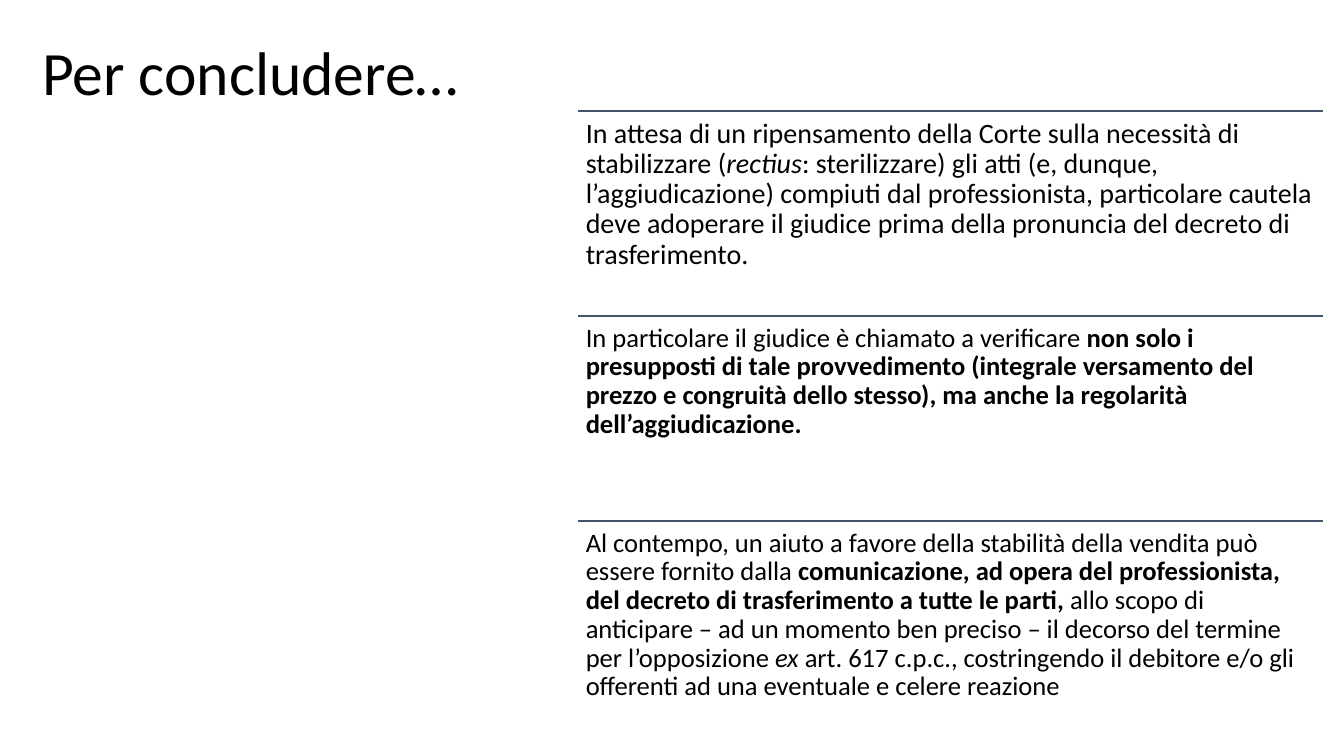
"""Builds the closing slide: a title and three ruled conclusions."""
from dataclasses import dataclass

from lxml.etree import SubElement
from pptx import Presentation
from pptx.dml.color import RGBColor as Rgb
from pptx.enum.shapes import MSO_CONNECTOR as Connector
from pptx.enum.text import MSO_ANCHOR as Anchor
from pptx.oxml.ns import qn
from pptx.slide import Slide
from pptx.util import Inches, Pt

COLOURS = {"text": "000000", "rule": "44546A"}
FONT = "Calibri"
COLUMN_LEFT, COLUMN_TOP, COLUMN_WIDTH, ROW_HEIGHT = 5.73, 1.1, 7.39, 2.03
ROW_STEP = 2.035


@dataclass(frozen=True)
class Phrase:
    text: str
    bold: bool = False
    italic: bool = False


@dataclass(frozen=True)
class Passage:
    size: int
    phrases: tuple[Phrase, ...]


@dataclass(frozen=True)
class Box:
    left: float
    top: float
    width: float
    height: float


TITLE = Passage(44, (Phrase("Per concludere…"),))
CONCLUSIONS = (
    Passage(20, (
        Phrase("In attesa di un ripensamento della Corte sulla necessità di stabilizzare ("),
        Phrase("rectius", italic=True),
        Phrase(": sterilizzare) gli atti (e, dunque, l’aggiudicazione) compiuti dal "
               "professionista, particolare cautela deve adoperare il giudice prima della "
               "pronuncia del decreto di trasferimento."),
    )),
    Passage(19, (
        Phrase("In particolare il giudice è chiamato a verificare "),
        Phrase("non solo i presupposti di tale provvedimento (integrale versamento del "
               "prezzo e congruità dello stesso), ma anche la regolarità "
               "dell’aggiudicazione.", bold=True),
    )),
    Passage(19, (
        Phrase("Al contempo, un aiuto a favore della stabilità della vendita può essere "
               "fornito dalla "),
        Phrase("comunicazione, ad opera del professionista, del decreto di trasferimento "
               "a tutte le parti,", bold=True),
        Phrase(" allo scopo di anticipare – ad un momento ben preciso – il decorso del "
               "termine per l’opposizione "),
        Phrase("ex ", italic=True),
        Phrase("art. 617 c.p.c., costringendo il debitore e/o gli offerenti ad una "
               "eventuale e celere reazione"),
    )),
)


def apply_format(target: object, values: dict[str, object]) -> None:
    """Set each named attribute of the target."""
    for name, value in values.items():
        setattr(target, name, value)


def add_passage(slide: Slide, passage: Passage, box: Box,
                frame_format: dict[str, object]) -> None:
    """Write one passage of mixed phrases in a wrapped box."""
    frame = slide.shapes.add_textbox(
        Inches(box.left), Inches(box.top), Inches(box.width), Inches(box.height)
    ).text_frame
    apply_format(frame, {"word_wrap": True, **frame_format})
    paragraph = frame.paragraphs[0]
    paragraph.line_spacing = 0.9
    for phrase in passage.phrases:
        run = paragraph.add_run()
        run.text = phrase.text
        apply_format(run.font, {"name": FONT, "size": Pt(passage.size),
                                "bold": phrase.bold, "italic": phrase.italic})
        run.font.color.rgb = Rgb.from_string(COLOURS["text"])


def add_rule(slide: Slide, left: float, top: float, width: float) -> None:
    """Draw the thin rule above a conclusion."""
    rule = slide.shapes.add_connector(
        Connector.STRAIGHT, Inches(left), Inches(top), Inches(left + width), Inches(top))
    rule.line.width = Pt(1)
    rule.line.color.rgb = Rgb.from_string(COLOURS["rule"])
    SubElement(rule.element.spPr, qn("a:effectLst"))


def main() -> None:
    """Lay out the slide and save it."""
    deck = Presentation()
    apply_format(deck, {"slide_width": Inches(13.33), "slide_height": Inches(7.5)})
    slide = deck.slides.add_slide(deck.slide_layouts[6])
    add_passage(slide, TITLE, Box(0.32, 0.11, 11.79, 1.28),
                {"vertical_anchor": Anchor.MIDDLE})
    insets = {f"margin_{side}": Inches(0.08) for side in ("left", "top", "right", "bottom")}
    for row, conclusion in enumerate(CONCLUSIONS):
        top = COLUMN_TOP + row * ROW_STEP
        add_rule(slide, COLUMN_LEFT, top, COLUMN_WIDTH)
        add_passage(slide, conclusion, Box(COLUMN_LEFT, top, COLUMN_WIDTH, ROW_HEIGHT),
                    {"vertical_anchor": Anchor.TOP, **insets})
    deck.save("out.pptx")


if __name__ == "__main__":
    main()
